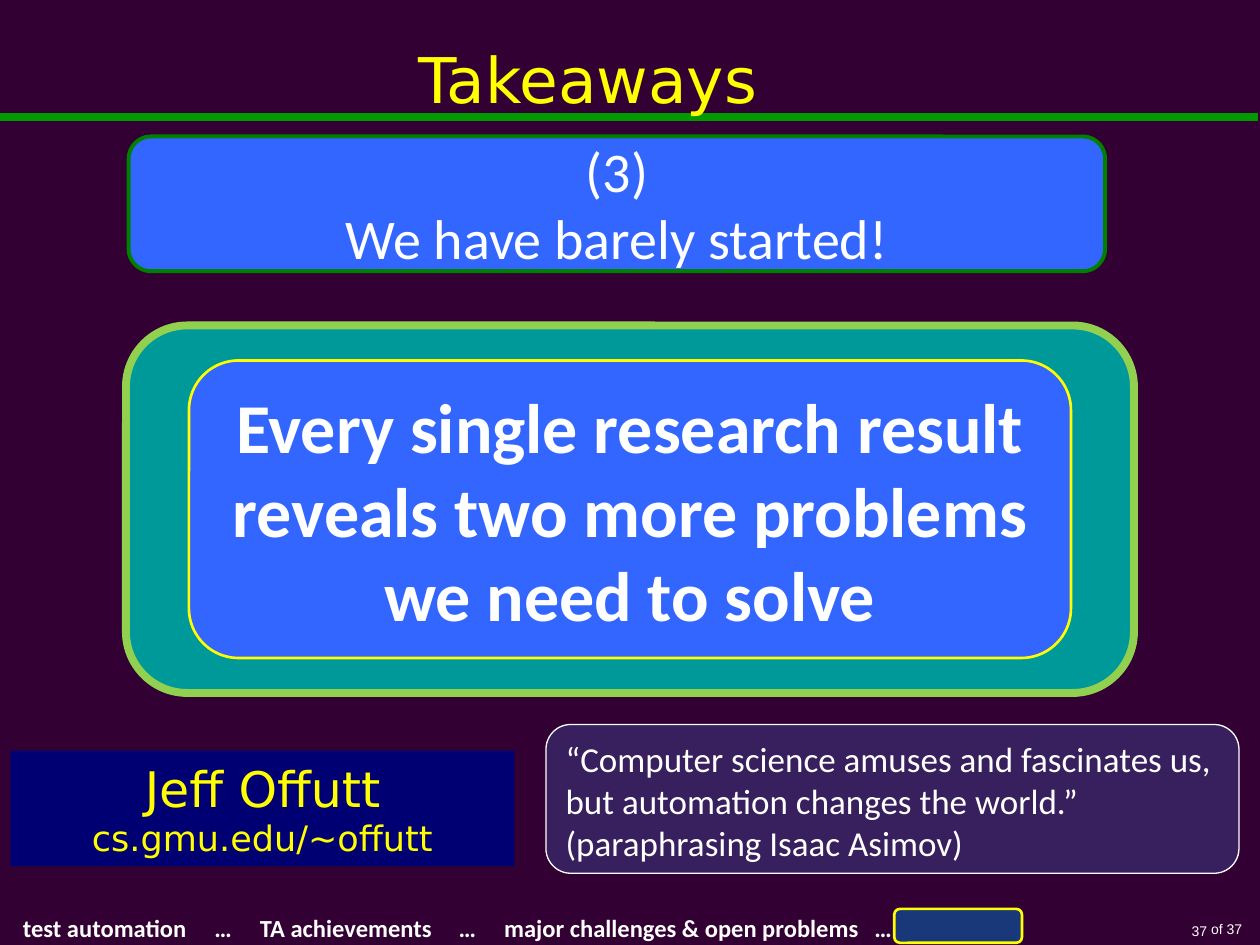
from lxml import etree
from pptx import Presentation
from pptx.dml.color import RGBColor
from pptx.enum.shapes import MSO_CONNECTOR, MSO_SHAPE
from pptx.enum.text import MSO_ANCHOR as Anchor, PP_ALIGN as Align
from pptx.oxml.ns import qn
from pptx.util import Pt

WHITE, YELLOW, BLUE = "FFFFFF", "FFFF00", "3366FF"
WIDTH, HEIGHT = 720, 540


def color(value):
    return RGBColor.from_string(value)


def write(shape, lines, sizes, font, ink=WHITE, align=Align.CENTER,
          anchor=Anchor.MIDDLE, bold=False):
    frame = shape.text_frame
    frame.word_wrap = True
    frame.vertical_anchor = anchor
    frame.text = "\n".join(lines)
    for paragraph, size in zip(frame.paragraphs, sizes):
        paragraph.alignment = align
        for run in paragraph.runs:
            run.font.size = Pt(size)
            run.font.name = font
            run.font.bold = bold
            run.font.color.rgb = color(ink)


def add_label(slide, box, *text, **style):
    label = slide.shapes.add_textbox(*map(Pt, box))
    write(label, *text, **style)
    return label


def add_panel(slide, box, fill, line=None, weight=1, kind=MSO_SHAPE.ROUNDED_RECTANGLE):
    panel = slide.shapes.add_shape(kind, *map(Pt, box))
    panel.shadow.inherit = False
    panel.fill.solid()
    panel.fill.fore_color.rgb = color(fill)
    if line:
        panel.line.color.rgb = color(line)
        panel.line.width = Pt(weight)
    else:
        panel.line.fill.background()
    return panel


def add_header(slide, box):
    left, top, width, height = box
    # Green rule across the slide
    rule_y = Pt(top + 67)
    rule = slide.shapes.add_connector(MSO_CONNECTOR.STRAIGHT, 0, rule_y, Pt(WIDTH - 1), rule_y)
    rule.line.color.rgb = color("009900")
    rule.line.width = Pt(4.5)
    etree.SubElement(rule._element.spPr, qn("a:effectLst"))
    # Title
    add_label(slide, box, ["Takeaways"], [36], "DejaVu Sans", ink=YELLOW)


def add_banner(slide, box):
    banner = add_panel(slide, box, BLUE, "008000", 2.25)
    write(banner, ["(3)", "We have barely started!"], [32, 32], "Calibri")


def add_message(slide, box):
    left, top, width, height = box
    margin_x, margin_y = 36, 20
    add_panel(slide, box, "009999", "92D050", 4.5)
    inner = (left + margin_x, top + margin_y, width - 2 * margin_x, height - 2 * margin_y)
    message = add_panel(slide, inner, BLUE, YELLOW, 1.5)
    write(message, ["Every single research result reveals two more problems we need to solve"],
          [40], "Calibri", bold=True)


def add_author(slide, box):
    author = add_panel(slide, box, "000073", kind=MSO_SHAPE.RECTANGLE)
    write(author, ["Jeff Offutt", "cs.gmu.edu/~offutt"], [28, 20], "DejaVu Sans", ink=YELLOW)


def add_quote(slide, box):
    quote = add_panel(slide, box, "38205E", WHITE, 0.75)
    write(quote, ["“Computer science amuses and fascinates us, but automation changes the world.”",
                  "(paraphrasing Isaac Asimov)"],
          [20, 20], "Calibri", align=Align.LEFT, anchor=Anchor.TOP)


def add_footer(slide, box):
    left, top, width, height = box
    # Outline of the talk, spaced by tab stops
    steps = ["test automation", "…", "TA achievements", "…",
             "major challenges & open problems", "…"]
    outline = add_label(slide, (left, top, 582, height), ["\t".join(steps)], [14],
                        "Calibri", align=Align.LEFT, anchor=Anchor.TOP, bold=True)
    properties = outline.text_frame.paragraphs[0]._p.get_or_add_pPr()
    tabs = etree.SubElement(properties, qn("a:tabLst"))
    for stop in (109.5, 135.5, 249, 275, 486.5):
        etree.SubElement(tabs, qn("a:tab"), pos=str(Pt(stop)), algn="l")
    # Page number
    for number_box, text, anchor in (
            ((566.6, top + 2, 130.4, 19.6), "37", Anchor.BOTTOM),
            ((left + width - 33, top + 4.3, 33, 17.3), "of 37", Anchor.TOP)):
        add_label(slide, number_box, [text], [8], "Arial", align=Align.RIGHT, anchor=anchor)
    # Half-transparent marker on the current step
    marker = add_panel(slide, (511, top + 1, 73, 19.4), "0070C0", YELLOW, 1.5)
    fill_color = marker._element.spPr.find(qn("a:solidFill"))[0]
    etree.SubElement(fill_color, qn("a:alpha"), val="50000")


def main():
    presentation = Presentation()
    presentation.slide_width, presentation.slide_height = Pt(WIDTH), Pt(HEIGHT)
    slide = presentation.slides.add_slide(presentation.slide_layouts[6])
    slide.background.fill.solid()
    slide.background.fill.fore_color.rgb = color("320032")

    add_header(slide, (6, 0, 660, 90))
    add_banner(slide, (73.5, 78, 558, 77))
    add_message(slide, (72, 186, 576, 210))
    add_author(slide, (6, 429, 288, 66))
    add_quote(slide, (312, 414, 396, 85))
    add_footer(slide, (6, 518.4, 711, 24.5))
    presentation.save("out.pptx")


if __name__ == "__main__":
    main()
